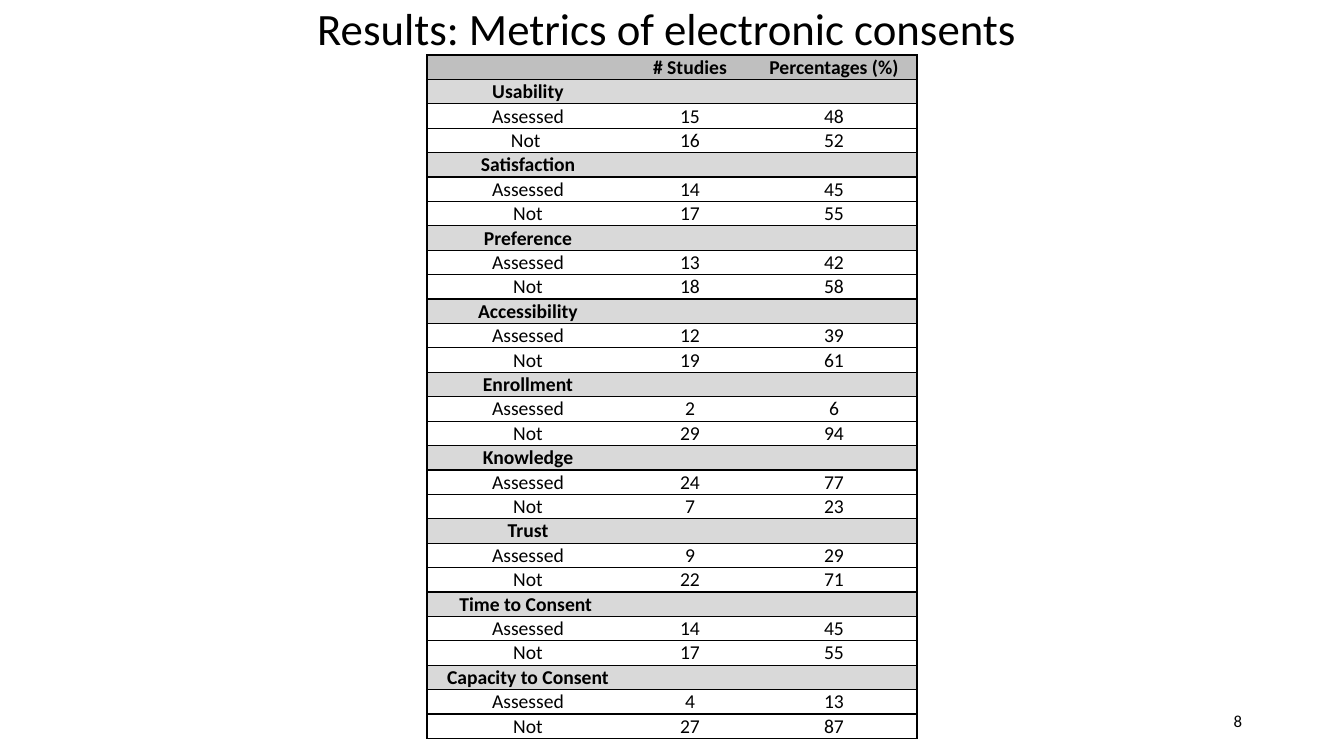
from lxml import etree
from pptx import Presentation
from pptx import util as u
from pptx.dml.color import RGBColor
from pptx.enum import text
from pptx.oxml import ns

BLACK = RGBColor(0x00, 0x00, 0x00)
HEADER_GREY = RGBColor(0xBF, 0xBF, 0xBF)
SECTION_GREY = RGBColor(0xD9, 0xD9, 0xD9)

SLIDE_WIDTH, SLIDE_HEIGHT = 1344, 756
EMU_PER_PX = 12192000 / SLIDE_WIDTH
PLAIN_TABLE_STYLE = "{2D5ABB26-0587-4C30-8999-92F81FD0307C}"

HEADINGS = ("", "# Studies", "Percentages (%)")
METRICS = [
    ("Usability", (15, 48), (16, 52)),
    ("Satisfaction", (14, 45), (17, 55)),
    ("Preference", (13, 42), (18, 58)),
    ("Accessibility", (12, 39), (19, 61)),
    ("Enrollment", (2, 6), (29, 94)),
    ("Knowledge", (24, 77), (7, 23)),
    ("Trust", (9, 29), (22, 71)),
    ("Time to Consent ", (14, 45), (17, 55)),
    ("Capacity to Consent", (4, 13), (27, 87)),
]


def px(length):
    return u.Emu(round(length * EMU_PER_PX))


class MetricsPage:
    """Draws the elements of one slide in a shared style."""

    font = "Calibri"
    align = text.PP_ALIGN

    def __init__(self, deck):
        self.page = deck.slides.add_slide(deck.slide_layouts[5])

    def add_words(self, para, words, size, align, bold=False):
        para.alignment = align
        span = para.add_run()
        span.text = words
        span.font.name = self.font
        span.font.size = u.Pt(size)
        span.font.bold = bold
        span.font.color.rgb = BLACK

    def title(self, words, left, top, width, height):
        box = self.page.shapes.title
        box.left, box.top, box.width, box.height = map(px, (left, top, width, height))
        frame = box.text_frame
        frame.word_wrap = False
        frame.auto_size = text.MSO_AUTO_SIZE.SHAPE_TO_FIT_TEXT
        frame.vertical_anchor = text.MSO_ANCHOR.TOP
        self.add_words(frame.paragraphs[0], words, 32, self.align.CENTER)

    def page_number(self, words, left, top, width, height):
        box = self.page.shapes.add_textbox(*map(px, (left, top, width, height)))
        frame = box.text_frame
        frame.word_wrap = True
        frame.vertical_anchor = text.MSO_ANCHOR.MIDDLE
        self.add_words(frame.paragraphs[0], words, 12, self.align.RIGHT)

    def border(self, cell, sides):
        properties = cell._tc.get_or_add_tcPr()
        for position, side in enumerate(sides):
            line = etree.Element(ns.qn(f"a:ln{side}"), w=str(u.Pt(1)))
            fill = etree.SubElement(line, ns.qn("a:solidFill"))
            etree.SubElement(fill, ns.qn("a:srgbClr"), val=str(BLACK))
            properties.insert(position, line)

    def cell(self, cell, words, fill, sides):
        cell.margin_left = cell.margin_right = px(7)
        cell.margin_top = cell.margin_bottom = 0
        cell.vertical_anchor = text.MSO_ANCHOR.BOTTOM
        if fill is None:
            cell.fill.background()
        else:
            cell.fill.solid()
            cell.fill.fore_color.rgb = fill
        self.border(cell, sides)
        para = cell.text_frame.paragraphs[0]
        if words:
            self.add_words(para, words, 14, self.align.CENTER, bold=fill is not None)
        else:
            etree.SubElement(para._p, ns.qn("a:endParaRPr"), sz="1400")

    def table(self, rows, left, top, widths, height):
        frame = self.page.shapes.add_table(
            len(rows), len(widths), px(left), px(top), px(sum(widths)), px(height))
        table = frame.table
        table.first_row = table.horz_banding = False
        table._tbl.tblPr.find(ns.qn("a:tableStyleId")).text = PLAIN_TABLE_STYLE
        for column, width in zip(table.columns, widths):
            column.width = px(width)
        last = len(widths) - 1
        for r, (fill, edges, words) in enumerate(rows):
            table.rows[r].height = px(height / len(rows))
            for c, word in enumerate(words):
                sides = "L" * (c == 0) + "R" * (c == last) + edges
                self.cell(table.cell(r, c), word, fill, sides)


def metric_rows():
    rows = [(HEADER_GREY, "TB", HEADINGS)]
    for number, (name, assessed, missing) in enumerate(METRICS):
        negative = "Not " if number == 0 else "Not"
        rows += [
            (SECTION_GREY, "TB", (name, "", "")),
            (None, "T", ("Assessed", *map(str, assessed))),
            (None, "B", (negative, *map(str, missing))),
        ]
    return rows


def main():
    deck = Presentation()
    deck.slide_width, deck.slide_height = px(SLIDE_WIDTH), px(SLIDE_HEIGHT)
    page = MetricsPage(deck)
    page.title("Results: Metrics of electronic consents ", 304, -4, 736, 65)
    page.table(metric_rows(), 427, 55, (202, 122, 166), 684)
    page.page_number("8", 950, 701, 302, 40)
    deck.save("out.pptx")


if __name__ == "__main__":
    main()
